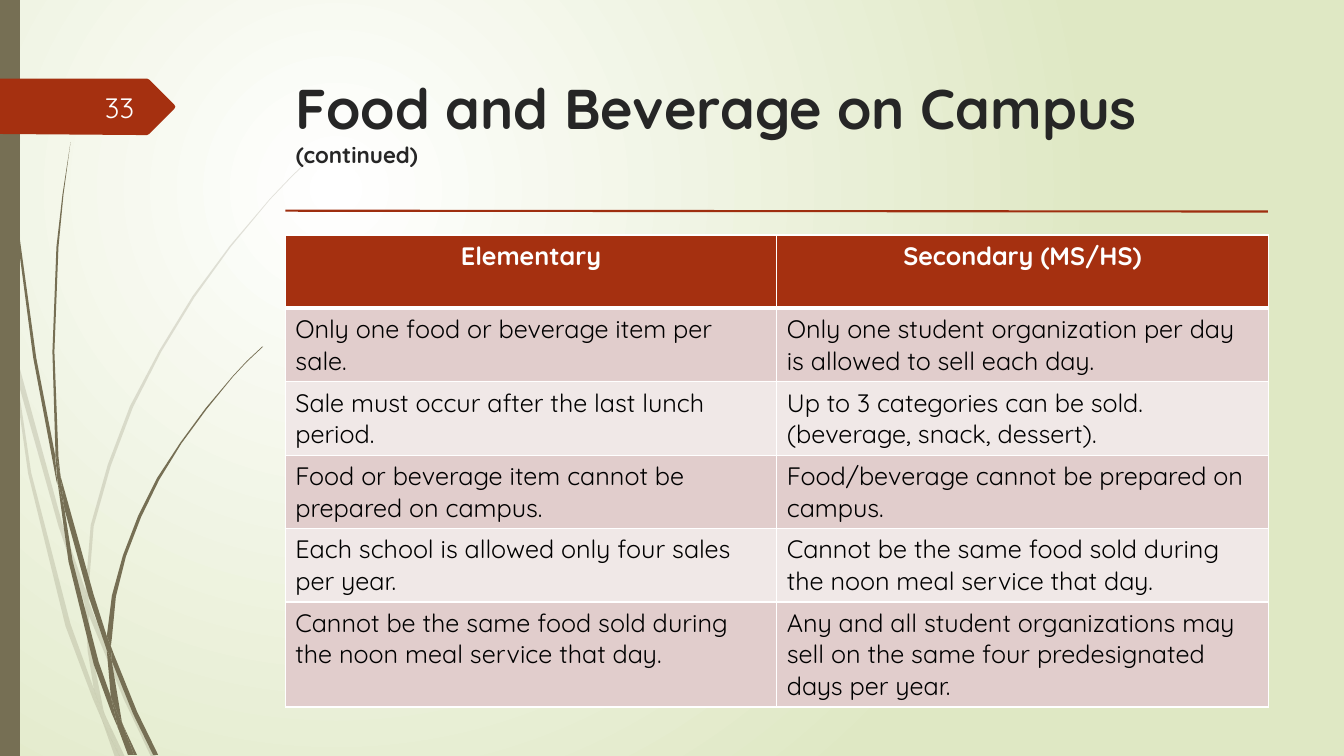
"""Build the slide on food and beverage sales on campus."""
from dataclasses import dataclass

from lxml.etree import SubElement
from pptx import Presentation
from pptx.dml.color import RGBColor
from pptx.enum.shapes import MSO_CONNECTOR, MSO_SHAPE
from pptx.enum.text import MSO_ANCHOR, MSO_AUTO_SIZE, PP_ALIGN
from pptx.oxml.ns import qn
from pptx.util import Cm, Pt


@dataclass(frozen=True)
class Theme:
    font: str = "Quicksand"
    red: str = "A53010"
    rule: str = "9E2E0F"
    olive: str = "766F54"
    white: str = "FFFFFF"
    number: str = "FEFFFF"
    green: str = "DFE8C4"
    heading: str = "262626"
    ink: str = "000000"
    bands: tuple = ("E1CDCC", "F0E8E7")
    title_size: int = 40
    number_size: int = 20
    body_size: int = 18
    note_size: int = 16


theme = Theme()


def add_text(paragraph, text, size=theme.body_size, color=theme.ink, bold=False, align=PP_ALIGN.LEFT):
    paragraph.alignment = align
    run = paragraph.add_run()
    run.text = text
    run.font.name = theme.font
    run.font.size = Pt(size)
    run.font.bold = bold
    run.font.color.rgb = RGBColor.from_string(color)


def paint(shape, color, opacity=100):
    shape.shadow.inherit = False
    shape.fill.solid()
    shape.fill.fore_color.rgb = RGBColor.from_string(color)
    shape.line.fill.background()
    if opacity < 100:
        tint = shape.element.spPr.find(qn("a:solidFill"))[0]
        SubElement(tint, qn("a:alpha"), val=str(opacity * 1000))


deck = Presentation()
deck.slide_width, deck.slide_height = Cm(33.87), Cm(19.05)
slide = deck.slides.add_slide(deck.slide_layouts[5])
shapes = slide.shapes

backdrop = slide.background.fill
backdrop.gradient()
for stop, color in zip(backdrop.gradient_stops, (theme.white, theme.green)):
    stop.color.rgb = RGBColor.from_string(color)
gradient = next(slide.element.iter(qn("a:gradFill")))
gradient.remove(gradient.find(qn("a:lin")))
glow = SubElement(gradient, qn("a:path"), path="circle")
SubElement(glow, qn("a:fillToRect"), l="50000", t="50000", r="100000", b="100000")

grid = Cm(2.54) / 100
pale_blades = [
    [(11, 350), (9, 322), (0, 282), (0, 299), (10, 344)],
    [(58, 522), (84, 599), (85, 586), (62, 520), (14, 345), (17, 376)],
    [(92, 607), (88, 596), (88, 610), (123, 694), (150, 751), (155, 751), (127, 692)],
    [(119, 751), (124, 751), (105, 711)],
    [(93, 683), (70, 619), (31, 469), (17, 376), (11, 350), (28, 470), (65, 621), (92, 693),
     (101, 714), (99, 707)],
    [(84, 599), (87, 646), (93, 683), (96, 692), (105, 711), (103, 706), (91, 646), (88, 610), (88, 608)],
    [(88, 584), (93, 522), (110, 462), (132, 404), (160, 349), (193, 295), (229, 245), (268, 198),
     (290, 175), (312, 154), (312, 153), (289, 175), (268, 197), (228, 244), (191, 294), (158, 348),
     (129, 403), (107, 461), (90, 521), (85, 584), (85, 586), (88, 596)],
    [(101, 714), (114, 751), (119, 751)],
    [(88, 608), (88, 610), (88, 596), (85, 586), (84, 599)],
    [(96, 692), (93, 683), (99, 707), (101, 714), (119, 751), (105, 711)],
]
dark_blades = [
    [(7, 110), (17, 233), (33, 355), (56, 477), (57, 481), (55, 457), (55, 453), (36, 355), (19, 232),
     (8, 109), (5, 48), (4, 0), (3, 0), (4, 48)],
    [(88, 592), (106, 645), (106, 631), (93, 590), (60, 472), (64, 505)],
    [(113, 649), (110, 641), (111, 656), (132, 708), (152, 749), (157, 749), (136, 706)],
    [(110, 691), (98, 657), (72, 556), (64, 505), (57, 477), (68, 557), (93, 659), (111, 708),
     (117, 722), (116, 717)],
    [(60, 472), (58, 453), (54, 349), (58, 245), (63, 193), (70, 141), (62, 193), (56, 245), (52, 349),
     (55, 449)],
    [(133, 749), (136, 749), (122, 719)],
    [(57, 477), (64, 505), (60, 472), (55, 449), (55, 453)],
    [(111, 633), (115, 592), (125, 552), (140, 513), (158, 476), (180, 440), (205, 406), (231, 374),
     (245, 359), (261, 344), (260, 344), (245, 358), (231, 373), (204, 405), (179, 439), (156, 474),
     (137, 512), (122, 551), (111, 591), (106, 631), (110, 641)],
    [(117, 722), (127, 749), (131, 749)],
    [(106, 645), (110, 691), (116, 706), (122, 719), (121, 716), (111, 656), (109, 651)],
    [(106, 645), (109, 651), (111, 656), (110, 641), (106, 631)],
    [(116, 706), (110, 691), (116, 717), (117, 722), (130, 749), (133, 749), (122, 719)],
]
for blades, opacity in ((pale_blades, 20), (dark_blades, 100)):
    for base, *edge in blades:
        outline = shapes.build_freeform(*base, scale=grid)
        outline.add_line_segments(edge, close=True)
        paint(outline.convert_to_shape(), theme.olive, opacity)

side_band = shapes.add_shape(MSO_SHAPE.RECTANGLE, 0, 0, Cm(0.5), deck.slide_height)
paint(side_band, theme.olive)
number_tag = shapes.build_freeform(0, 78, scale=grid)
number_tag.add_line_segments([(146, 78), (148, 79), (173, 104), (174, 106), (173, 108), (148, 133),
                              (146, 134), (136, 134), (0, 133)], close=True)
paint(number_tag.convert_to_shape(), theme.red)

title = shapes.title
title.left, title.top, title.width, title.height = Cm(7.2), Cm(1.73), Cm(24.77), Cm(3.56)
title.element.getparent().append(title.element)
title.text_frame.auto_size = MSO_AUTO_SIZE.NONE
title.text_frame.vertical_anchor = MSO_ANCHOR.TOP
heading = title.text_frame.paragraphs[0]
add_text(heading, "Food and Beverage on Campus", size=theme.title_size, color=theme.heading, bold=True)
heading.add_line_break()
add_text(heading, "(continued)", size=theme.note_size, color=theme.heading, bold=True)

sales_rules = [
    ("Elementary", "Secondary (MS/HS)"),
    ("Only one food or beverage item per sale.",
     "Only one student organization per day is allowed to sell each day."),
    ("Sale must occur after the last lunch period.",
     "Up to 3 categories can be sold. (beverage, snack, dessert)."),
    ("Food or beverage item cannot be prepared on campus.",
     "Food/beverage cannot be prepared on campus."),
    ("Each school is allowed only four sales per year.",
     "Cannot be the same food sold during the noon meal service that day."),
    ("Cannot be the same food sold during the noon meal service that day.",
     "Any and all student organizations may sell on the same four predesignated days per year."),
]
row_height = 1.85
table = shapes.add_table(len(sales_rules), 2, Cm(7.19), Cm(5.92), Cm(24.77),
                         Cm(row_height * len(sales_rules))).table
for row, entries in enumerate(sales_rules):
    table.rows[row].height = Cm(row_height)
    header = row == 0
    for column, entry in enumerate(entries):
        cell = table.cell(row, column)
        properties = cell._tc.get_or_add_tcPr()
        for side in ("lnL", "lnR", "lnT", "lnB"):
            thick = (header and side == "lnB") or (row == 1 and side == "lnT")
            border = SubElement(properties, qn(f"a:{side}"), w=str(Pt(3 if thick else 1)))
            SubElement(SubElement(border, qn("a:solidFill")), qn("a:srgbClr"), val=theme.white)
        cell.fill.solid()
        cell.fill.fore_color.rgb = RGBColor.from_string(theme.red if header else theme.bands[(row - 1) % 2])
        add_text(cell.text_frame.paragraphs[0], entry, bold=header,
                 color=theme.white if header else theme.ink,
                 align=PP_ALIGN.CENTER if header else PP_ALIGN.LEFT)

page_number = shapes.add_textbox(Cm(1.48), Cm(2.19), Cm(2.15), Cm(1.01)).text_frame
page_number.word_wrap = True
page_number.vertical_anchor = MSO_ANCHOR.MIDDLE
add_text(page_number.paragraphs[0], "33", size=theme.number_size, color=theme.number, align=PP_ALIGN.RIGHT)

divider = shapes.add_connector(MSO_CONNECTOR.STRAIGHT, Cm(7.19), Cm(5.31), Cm(31.95), Cm(5.33))
divider.line.color.rgb = RGBColor.from_string(theme.rule)
divider.line.width = Pt(1.5)
SubElement(divider.element.spPr, qn("a:effectLst"))

deck.save("out.pptx")
